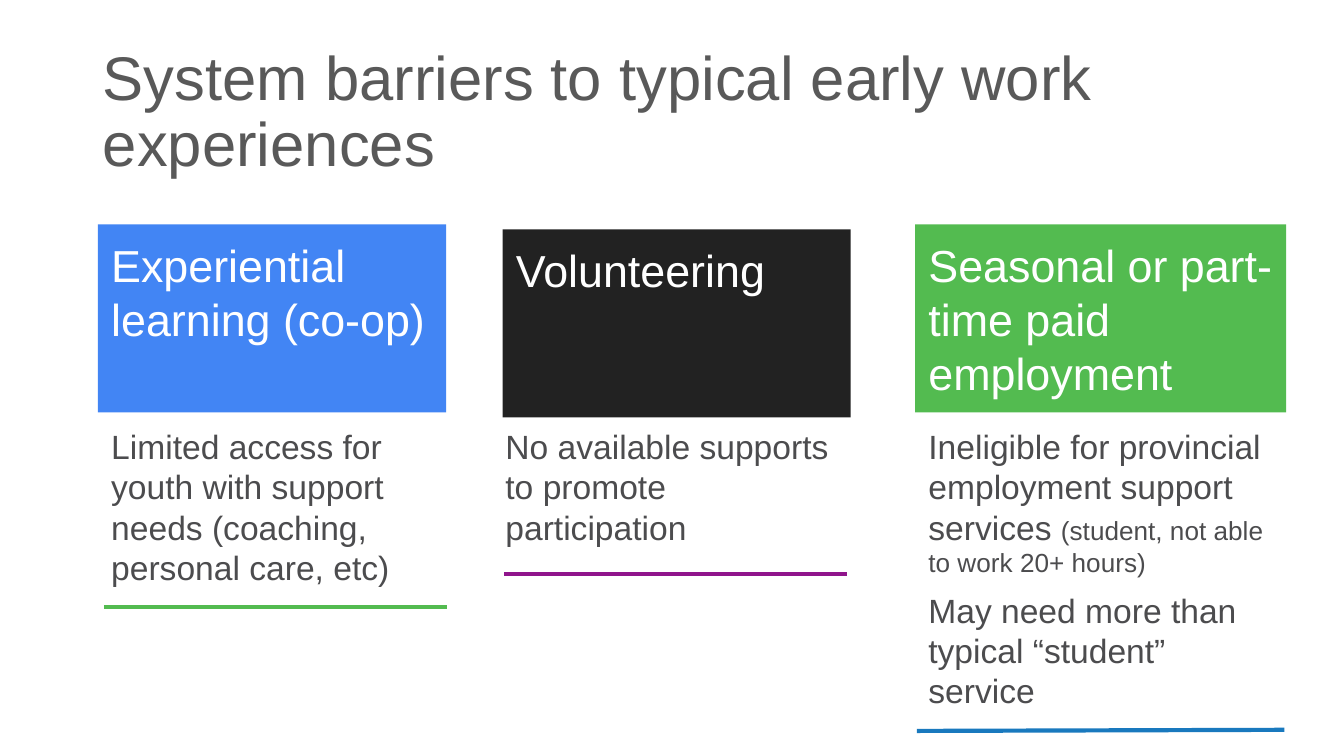
from dataclasses import dataclass

from pptx import Presentation
from pptx import util as u
from pptx.dml.color import RGBColor
from pptx.enum import shapes, text
from pptx.oxml.ns import qn
from lxml import etree


@dataclass(frozen=True)
class Theme:
    font: str = "Arial"
    title: str = "595959"
    body: str = "4C4C4E"
    white: str = "FFFFFF"
    blue: str = "4285F4"
    black: str = "222222"
    green: str = "53BB50"
    purple: str = "90158C"
    navy: str = "1979BE"
    big: int = 33
    head: int = 24
    main: int = 18
    small: int = 14
    rule: float = 2.25


class Deck:
    """Holds the theme and the current slide."""

    def __init__(self, theme):
        self.theme = theme
        self.show = Presentation()
        self.show.slide_width, self.show.slide_height = u.Pt(720), u.Pt(405)
        self.slide = self.show.slides.add_slide(self.show.slide_layouts[6])

    def fill(self, frame, paras, color, inset=(7.2, 7.2), before=0, lead=None,
             anchor=text.MSO_ANCHOR.TOP):
        """Write paragraphs, each a list of (words, size) runs."""
        frame.word_wrap = True
        frame.vertical_anchor = anchor
        frame.margin_left = frame.margin_right = u.Pt(inset[0])
        frame.margin_top = frame.margin_bottom = u.Pt(inset[1])
        for i, runs in enumerate(paras):
            para = frame.add_paragraph() if i else frame.paragraphs[0]
            para.alignment = text.PP_ALIGN.LEFT
            para.space_before = u.Pt(before)
            if lead:
                para.line_spacing = lead
            for words, size in runs:
                run = para.add_run()
                run.text = words
                run.font.name = self.theme.font
                run.font.size = u.Pt(size)
                run.font.color.rgb = RGBColor.from_string(color)

    def label(self, box, paras, color, **style):
        shape = self.slide.shapes.add_textbox(*map(u.Pt, box))
        self.fill(shape.text_frame, paras, color, **style)

    def block(self, box, words, color):
        shape = self.slide.shapes.add_shape(
            shapes.MSO_SHAPE.RECTANGLE, *map(u.Pt, box))
        shape.shadow.inherit = False
        shape.fill.solid()
        shape.fill.fore_color.rgb = RGBColor.from_string(color)
        shape.line.fill.background()
        self.fill(shape.text_frame, [[(words, self.theme.head)]],
                  self.theme.white)

    def rule(self, ends, color):
        line = self.slide.shapes.add_connector(
            shapes.MSO_CONNECTOR.STRAIGHT, *map(u.Pt, ends))
        line.line.color.rgb = RGBColor.from_string(color)
        line.line.width = u.Pt(self.theme.rule)
        etree.SubElement(line._element.spPr, qn("a:effectLst"))


def main():
    look = Theme()
    deck = Deck(look)

    # Title
    deck.label((49.7, 21.6, 620.6, 78.5),
               [[("System barriers to typical early work experiences",
                  look.big)]],
               look.title, inset=(5.4, 2.7), lead=0.9,
               anchor=text.MSO_ANCHOR.MIDDLE)

    # Columns: head box, head, head colour, body box, body, space before,
    # rule ends, rule colour
    tall, top = 100.8, 221
    cols = [
        ((52.5, 120.2, 186.5, tall), "Experiential learning (co-op)",
         look.blue, (52.5, top, 186.5, tall),
         [[("Limited access for youth with support needs "
            "(coaching, personal care, etc)", look.main)]],
         6, (55.7, 325.2, 239.5, 325.2), look.green),
        ((269.3, 122.9, 186.5, tall), "Volunteering",
         look.black, (263.7, top, 198.7, tall),
         [[("No available supports to promote participation", look.main)]],
         0, (270, 307.5, 453.8, 307.5), look.purple),
        ((490.3, 120.2, 198.7, tall), "Seasonal or part-time paid employment",
         look.green, (490.3, top, 198.7, 163.4),
         [[("Ineligible for provincial employment support services ",
            look.main),
           ("(student, not able to work 20+ hours)", look.small)],
          [("May need more than typical “student” service", look.main)]],
         6, (491.2, 391.6, 688, 391), look.navy),
    ]
    for box, head, tint, area, body, gap, ends, hue in cols:
        deck.block(box, head, tint)
        deck.label(area, body, look.body, before=gap)
        deck.rule(ends, hue)

    deck.show.save("out.pptx")


if __name__ == "__main__":
    main()
